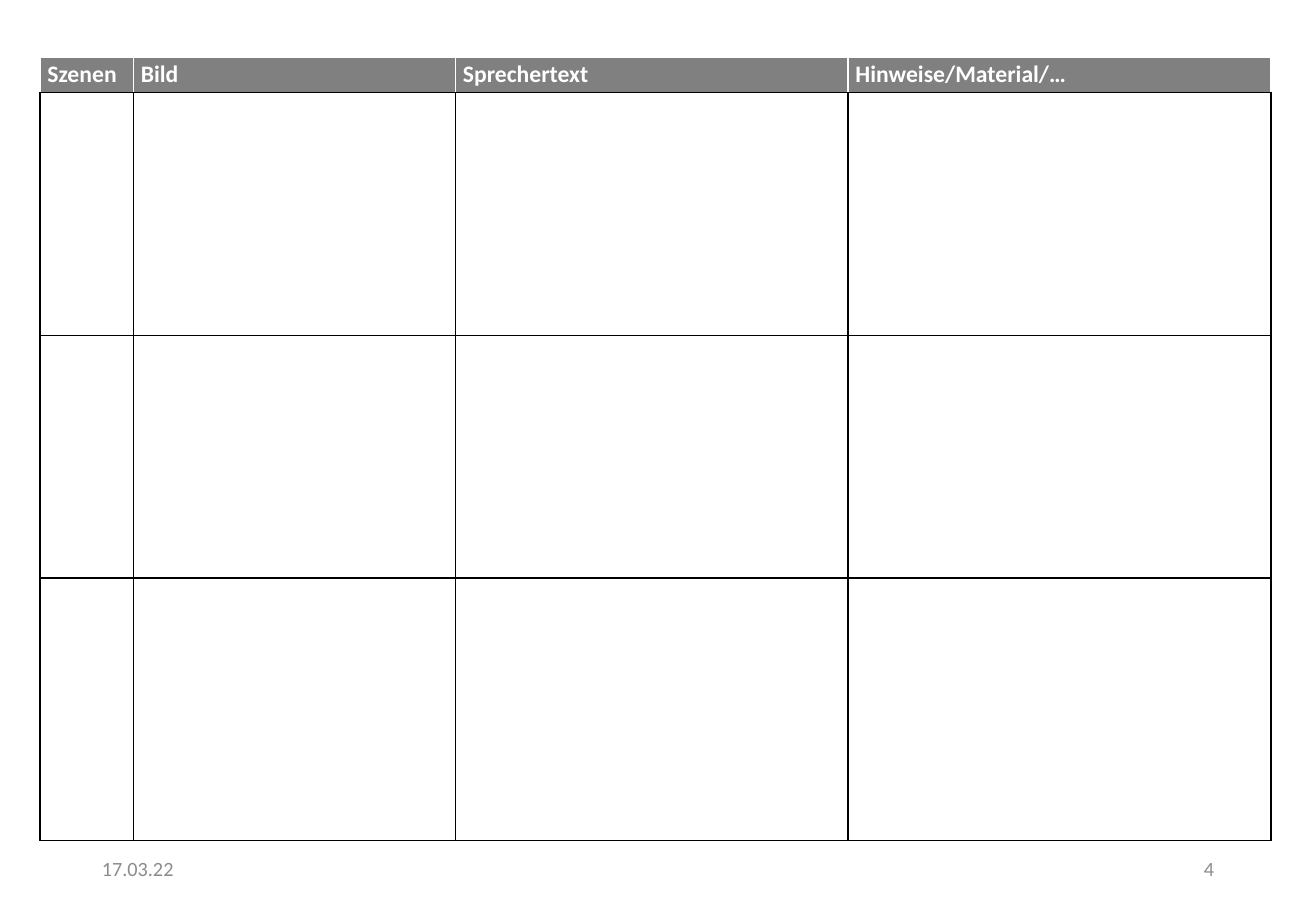
from lxml.etree import SubElement
from pptx import Presentation
from pptx.dml.color import RGBColor
from pptx.enum.text import MSO_ANCHOR as ANCHOR, PP_ALIGN as ALIGN
from pptx.oxml.ns import qn
from pptx.util import Emu, Pt

BLACK = RGBColor(0x00, 0x00, 0x00)
WHITE = RGBColor(0xFF, 0xFF, 0xFF)
HEADER_GRAY = RGBColor(0x80, 0x80, 0x80)
FOOTER_GRAY = RGBColor(0x8C, 0x8C, 0x8C)

HEADERS = ["Szenen", "Bild", "Sprechertext", "Hinweise/Material/…"]
COLUMN_WIDTHS = [77, 265, 323, 348]
ROW_HEIGHTS = [29, 200, 200, 216]


def px(n):
    return Emu(n * 9144)


class Storyboard:
    font = "Calibri"
    border_width = Pt(1)

    def __init__(self, slide):
        self.slide = slide

    def format_runs(self, p, size, color, bold=False):
        for r in p.runs:
            r.font.name = self.font
            r.font.size = Pt(size)
            r.font.bold = bold
            r.font.color.rgb = color

    def footer(self, x, y, w, h, text, align):
        tf = self.slide.shapes.add_textbox(px(x), px(y), px(w), px(h)).text_frame
        tf.word_wrap = True
        tf.vertical_anchor = ANCHOR.MIDDLE
        tf.text = text
        p = tf.paragraphs[0]
        p.alignment = align
        self.format_runs(p, 12, FOOTER_GRAY)

    def borders(self, cell, side_color, top_color):
        tc_pr = cell._tc.get_or_add_tcPr()
        colors = [("L", side_color), ("R", side_color), ("T", top_color), ("B", BLACK)]
        for i, (side, color) in enumerate(colors):
            ln = SubElement(tc_pr, qn(f"a:ln{side}"), w=str(self.border_width))
            fill = SubElement(ln, qn("a:solidFill"))
            SubElement(fill, qn("a:srgbClr"), val=str(color))
            tc_pr.insert(i, ln)

    def header_cell(self, cell, text):
        cell.text = text
        cell.vertical_anchor = ANCHOR.MIDDLE
        cell.margin_left = cell.margin_right = px(6)
        cell.margin_top = cell.margin_bottom = 0
        cell.fill.solid()
        cell.fill.fore_color.rgb = HEADER_GRAY
        self.format_runs(cell.text_frame.paragraphs[0], 14, WHITE, bold=True)
        self.borders(cell, WHITE, WHITE)

    def empty_cell(self, cell):
        cell.fill.background()
        self.borders(cell, BLACK, BLACK)

    def table(self, x, y, headers, widths, heights):
        table = self.slide.shapes.add_table(
            len(heights), len(widths), px(x), px(y), px(sum(widths)), px(sum(heights))
        ).table
        table.horz_banding = False
        for column, width in zip(table.columns, widths):
            column.width = px(width)
        for row, height in zip(table.rows, heights):
            row.height = px(height)
        for c, text in enumerate(headers):
            self.header_cell(table.cell(0, c), text)
            for r in range(1, len(heights)):
                self.empty_cell(table.cell(r, c))


def main():
    prs = Presentation()
    prs.slide_width, prs.slide_height = px(1083), px(750)
    s = Storyboard(prs.slides.add_slide(prs.slide_layouts[6]))
    s.footer(74, 695, 244, 40, "17.03.22", ALIGN.LEFT)
    s.footer(765, 695, 244, 40, "4", ALIGN.RIGHT)
    s.table(33, 47, HEADERS, COLUMN_WIDTHS, ROW_HEIGHTS)
    prs.save("out.pptx")


if __name__ == "__main__":
    main()
